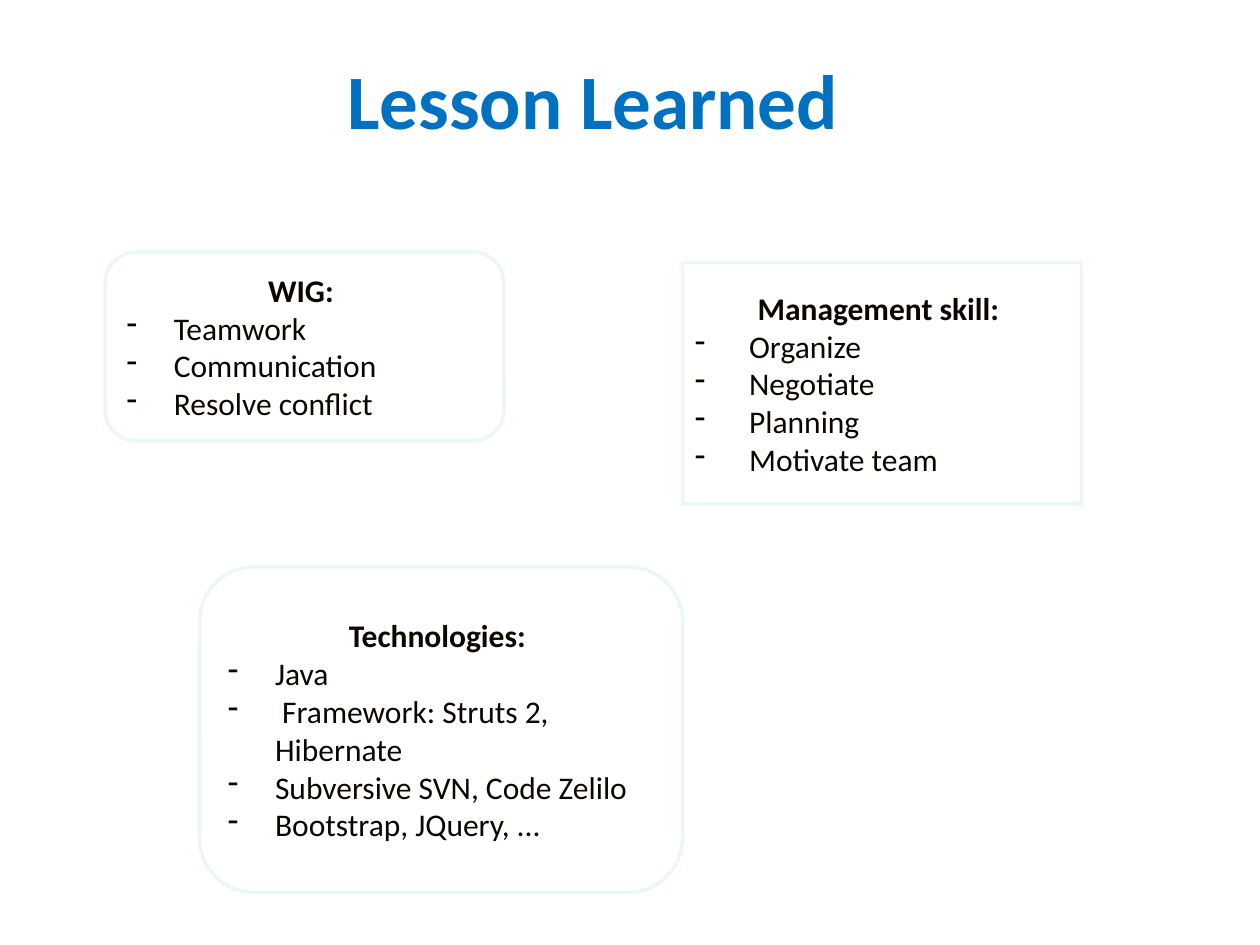
from lxml import etree
from pptx import Presentation
from pptx.dml.color import RGBColor
from pptx.enum.shapes import MSO_SHAPE
from pptx.enum.text import MSO_ANCHOR, PP_ALIGN
from pptx.oxml.ns import qn
from pptx.util import Pt

RECTANGLE = MSO_SHAPE.RECTANGLE
ROUNDED = MSO_SHAPE.ROUNDED_RECTANGLE
MIDDLE = MSO_ANCHOR.MIDDLE
CENTER = PP_ALIGN.CENTER
LEFT = PP_ALIGN.LEFT

BLUE = RGBColor(0x00, 0x70, 0xC0)
WHITE = RGBColor(0xFF, 0xFF, 0xFF)
PALE_BLUE = RGBColor(0xEC, 0xF6, 0xF8)
DARK = RGBColor(0x0C, 0x06, 0x00)

TITLE_FORMAT = {"name": "Calibri", "size": Pt(44), "bold": True}
HEADING_FORMAT = {"name": "Calibri", "size": Pt(18), "bold": True}
ITEM_FORMAT = {"name": "Calibri", "size": Pt(18), "bold": False}

CARDS = [
    (ROUNDED, (60, 144, 228, 108), 27, "WIG: ",
     ["Teamwork", "Communication", "Resolve conflict"]),
    (RECTANGLE, (390, 150, 228, 138), 31, "Management skill: ",
     ["Organize", "Negotiate", "Planning", "Motivate team"]),
    (ROUNDED, (114, 324, 276, 186), 27, "Technologies: ",
     ["Java", " Framework: Struts 2, Hibernate",
      "Subversive SVN, Code Zelilo", "Bootstrap, JQuery, ..."]),
]


def add_text(paragraph, text, alignment, values, color):
    paragraph.alignment = alignment
    run = paragraph.add_run()
    run.text = text
    for name, value in values.items():
        setattr(run.font, name, value)
    run.font.color.rgb = color


def add_dash(paragraph, indent):
    properties = paragraph._p.get_or_add_pPr()
    properties.set("marL", str(Pt(indent)))
    properties.set("indent", str(-Pt(indent)))
    etree.SubElement(properties, qn("a:buFontTx"))
    etree.SubElement(properties, qn("a:buChar")).set("char", "-")


presentation = Presentation()
presentation.slide_width = Pt(720)
presentation.slide_height = Pt(540)
slide = presentation.slides.add_slide(presentation.slide_layouts[5])

title = slide.shapes.title
title.left, title.top, title.width, title.height = Pt(91), Pt(33.5), Pt(496), Pt(46)
title.text_frame.vertical_anchor = MIDDLE
add_text(title.text_frame.paragraphs[0], "Lesson Learned", CENTER, TITLE_FORMAT, BLUE)

for kind, box, indent, heading, items in CARDS:
    shape = slide.shapes.add_shape(kind, *map(Pt, box))
    shape.shadow.inherit = False
    shape.fill.solid()
    shape.fill.fore_color.rgb = WHITE
    shape.line.color.rgb = PALE_BLUE
    shape.line.width = Pt(2)
    frame = shape.text_frame
    frame.word_wrap = True
    frame.vertical_anchor = MIDDLE

    add_text(frame.paragraphs[0], heading, CENTER, HEADING_FORMAT, DARK)
    for item in items:
        paragraph = frame.add_paragraph()
        add_dash(paragraph, indent)
        add_text(paragraph, item, LEFT, ITEM_FORMAT, DARK)

presentation.save("out.pptx")
